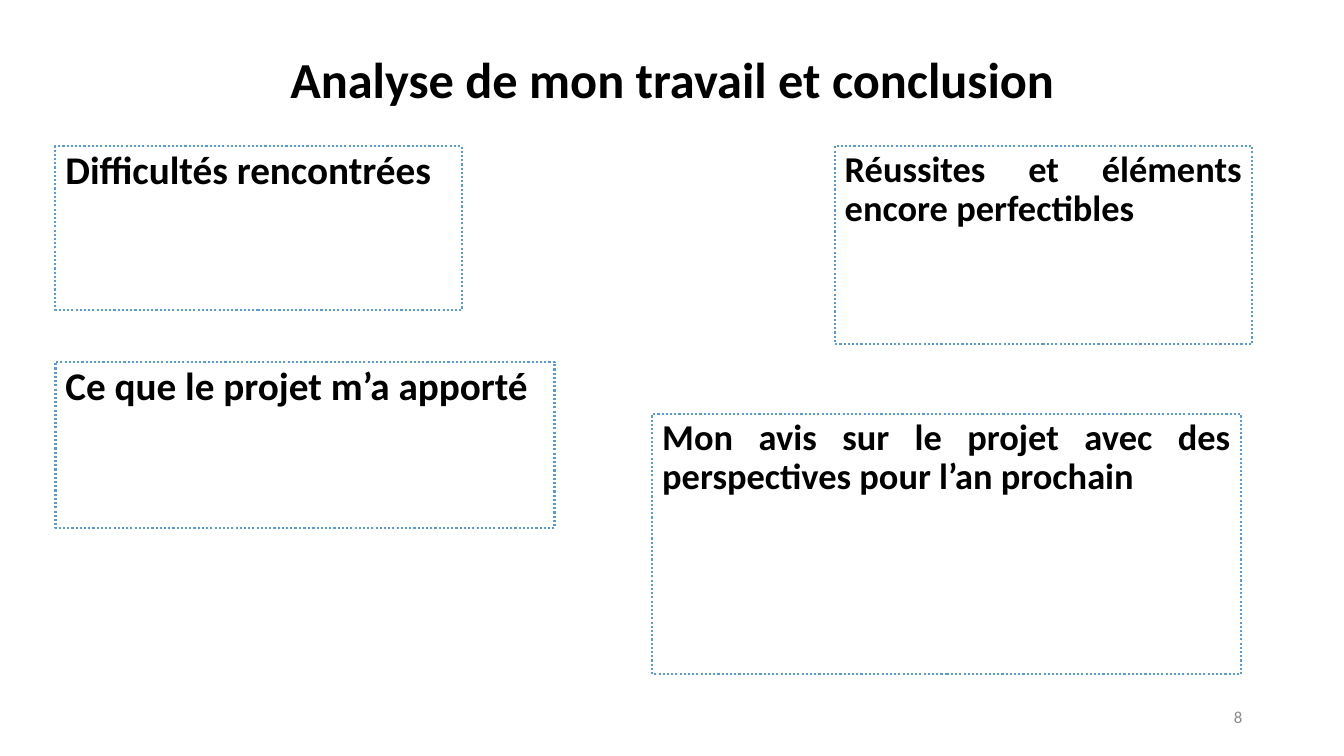
from pptx import Presentation
from pptx.dml.color import RGBColor
from pptx.enum.dml import MSO_LINE
from pptx.enum.shapes import MSO_SHAPE
from pptx.enum.text import MSO_ANCHOR, PP_ALIGN
from pptx.util import Inches, Pt

WIDTH, HEIGHT = 13.33, 7.5
LEFT, TOP, RIGHT = 0.55, 1.45, 12.42
FONT = "Calibri"
BLACK, GREY, WHITE, BLUE = "000000", "8B8B8B", "FFFFFF", "5B9BD5"

TITLE = "Analyse de mon travail et conclusion"
PAGE_NUMBER = "8"

# heading, size in points, (left, top, width, height) in inches
SECTIONS = [
    ("Difficultés rencontrées", 28, (LEFT, TOP, 4.03, 1.63)),
    ("Réussites et éléments encore perfectibles", 26,
     (RIGHT - 4.14, TOP, 4.14, 1.96)),
    ("Ce que le projet m’a apporté", 28, (LEFT, 3.59, 4.95, 1.65)),
    ("Mon avis sur le projet avec des perspectives pour l’an prochain", 26,
     (6.47, 4.11, 5.84, 2.58)),
]


def rgb(value):
    return RGBColor.from_string(value)


def write(sp, text, size, align, anchor, color=BLACK, bold=True,
          line_spacing=0.9, space_before=0):
    tf = sp.text_frame
    tf.word_wrap = True
    tf.vertical_anchor = anchor
    p = tf.paragraphs[0]
    p.alignment = align
    p.line_spacing = line_spacing
    p.space_before = Pt(space_before)
    r = p.add_run()
    r.text = text
    r.font.name = FONT
    r.font.size = Pt(size)
    r.font.bold = bold
    r.font.color.rgb = rgb(color)


def add_section(slide, heading, size, box):
    sp = slide.shapes.add_shape(MSO_SHAPE.RECTANGLE, *map(Inches, box))
    sp.shadow.inherit = False
    sp.fill.solid()
    sp.fill.fore_color.rgb = rgb(WHITE)
    sp.line.color.rgb = rgb(BLUE)
    sp.line.width = Pt(1.5)
    sp.line.dash_style = MSO_LINE.ROUND_DOT
    write(sp, heading, size, PP_ALIGN.JUSTIFY, MSO_ANCHOR.TOP, space_before=10)


def add_text(slide, box, *args, **style):
    sp = slide.shapes.add_textbox(*map(Inches, box))
    write(sp, *args, **style)


def main():
    prs = Presentation()
    prs.slide_width, prs.slide_height = Inches(WIDTH), Inches(HEIGHT)
    slide = prs.slides.add_slide(prs.slide_layouts[6])
    add_text(slide, (RIGHT - 11.5, 0.4, 11.5, 0.83), TITLE, 36,
             PP_ALIGN.CENTER, MSO_ANCHOR.MIDDLE)
    for section in SECTIONS:
        add_section(slide, *section)
    add_text(slide, (RIGHT - 4.5, 6.91, 4.5, 0.4), PAGE_NUMBER, 12,
             PP_ALIGN.RIGHT, MSO_ANCHOR.MIDDLE, color=GREY, bold=False,
             line_spacing=1.0)
    prs.save("out.pptx")


if __name__ == "__main__":
    main()
